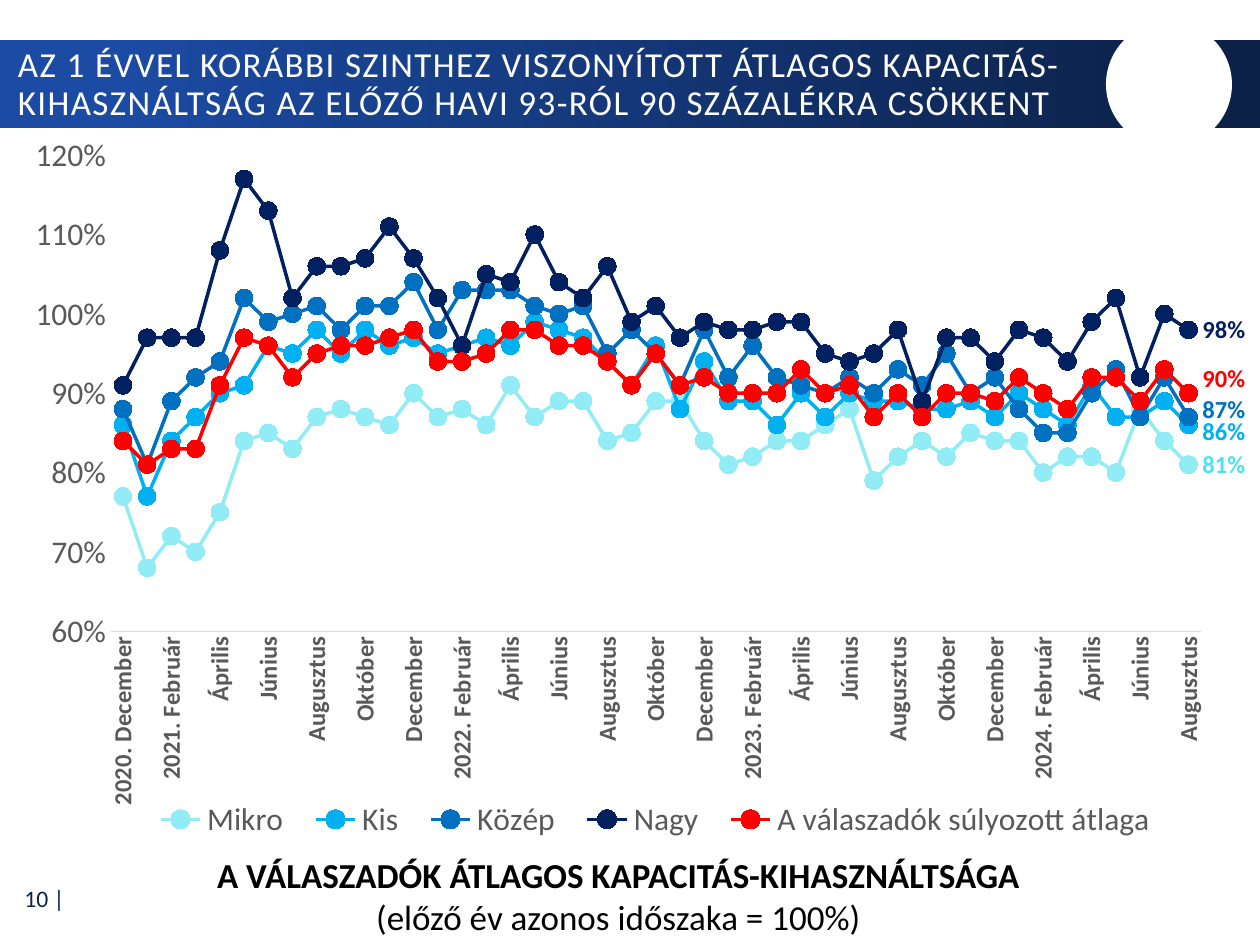
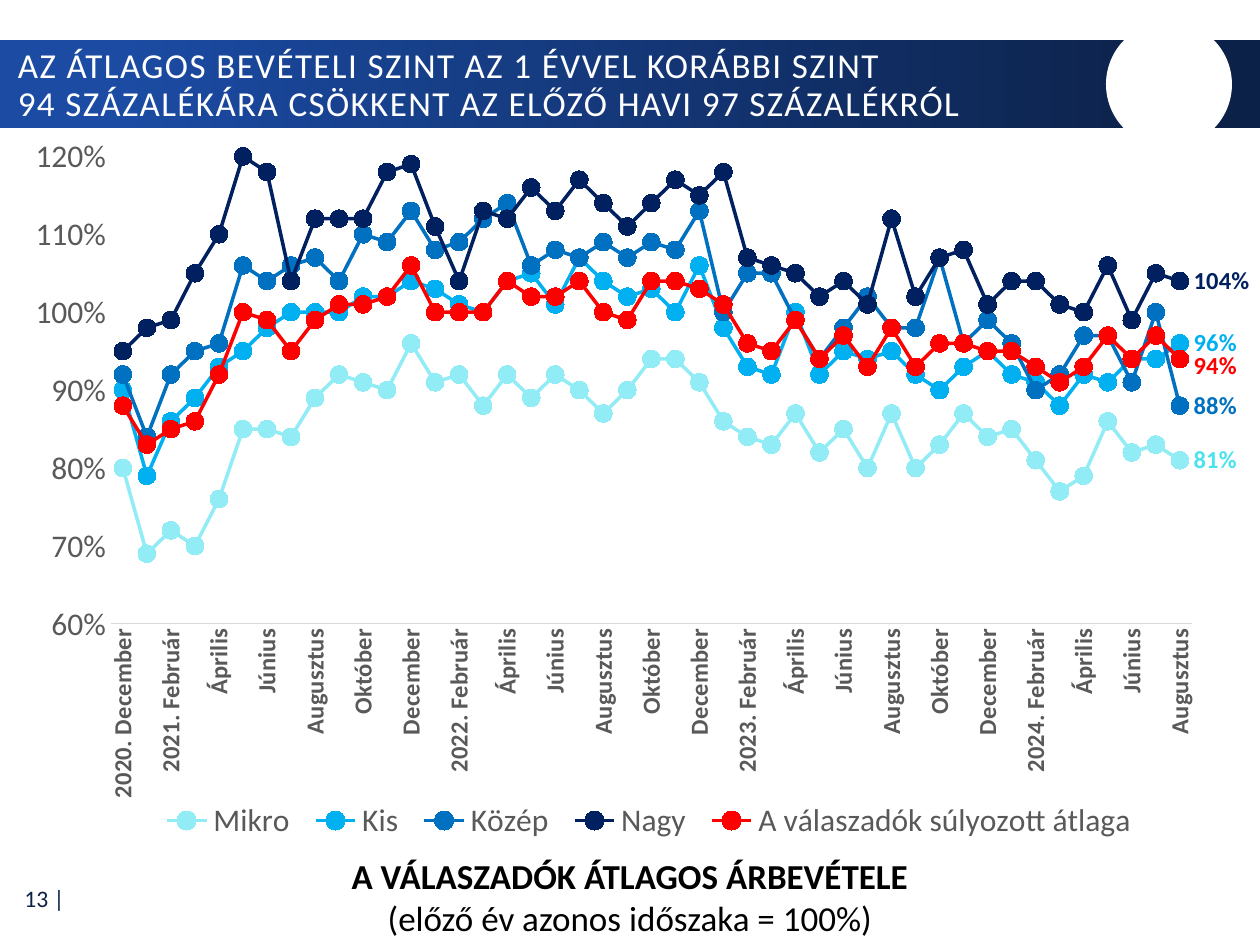
from lxml import etree
from pptx import Presentation
from pptx import util as u
from pptx.chart.data import CategoryChartData
from pptx.dml.color import RGBColor
from pptx.enum import chart as ch, shapes, text
from pptx.oxml import ns

Pt = u.Pt
FONT = "Calibri"
WHITE = RGBColor(0xFF, 0xFF, 0xFF)
BLACK = RGBColor(0, 0, 0)
NAVY = RGBColor(0x0C, 0x21, 0x48)
BLUE = RGBColor(0x1B, 0x4B, 0xA3)
GREY = RGBColor(0x59, 0x59, 0x59)
AXIS_GREY = RGBColor(0xD9, 0xD9, 0xD9)

# Company size: (line colour, label colour)
GROUPS = {
    "Mikro": (RGBColor(0x92, 0xEC, 0xF6), RGBColor(0x4C, 0xE2, 0xF0)),
    "Kis": (RGBColor(0x00, 0xB0, 0xF0),) * 2,
    "Közép": (RGBColor(0x00, 0x70, 0xC0),) * 2,
    "Nagy": (RGBColor(0x00, 0x20, 0x60),) * 2,
    "A válaszadók súlyozott átlaga": (RGBColor(0xFF, 0, 0),) * 2,
}

MONTHS = ["Február", "Április", "Június", "Augusztus", "Október", "December"]
MONTH_COUNT = 45
BASE_NOTE = "(előző év azonos időszaka = 100%)"

# Percent of the same period a year before, one row per company size
CAPACITY = [
    [77, 68, 72, 70, 75, 84, 85, 83, 87, 88, 87, 86, 90, 87, 88,
     86, 91, 87, 89, 89, 84, 85, 89, 89, 84, 81, 82, 84, 84, 86,
     88, 79, 82, 84, 82, 85, 84, 84, 80, 82, 82, 80, 88, 84, 81],
    [86, 77, 84, 87, 90, 91, 96, 95, 98, 95, 98, 96, 97, 95, 96,
     97, 96, 99, 98, 97, 94, 91, 96, 88, 94, 89, 89, 86, 90, 87,
     90, 89, 89, 88, 88, 89, 87, 90, 88, 86, 91, 87, 87, 89, 86],
    [88, 81, 89, 92, 94, 102, 99, 100, 101, 98, 101, 101, 104, 98, 103,
     103, 103, 101, 100, 101, 95, 98, 95, 91, 98, 92, 96, 92, 91, 90,
     92, 90, 93, 91, 95, 90, 92, 88, 85, 85, 90, 93, 87, 92, 87],
    [91, 97, 97, 97, 108, 117, 113, 102, 106, 106, 107, 111, 107, 102, 96,
     105, 104, 110, 104, 102, 106, 99, 101, 97, 99, 98, 98, 99, 99, 95,
     94, 95, 98, 89, 97, 97, 94, 98, 97, 94, 99, 102, 92, 100, 98],
    [84, 81, 83, 83, 91, 97, 96, 92, 95, 96, 96, 97, 98, 94, 94,
     95, 98, 98, 96, 96, 94, 91, 95, 91, 92, 90, 90, 90, 93, 90,
     91, 87, 90, 87, 90, 90, 89, 92, 90, 88, 92, 92, 89, 93, 90],
]
REVENUE = [
    [80, 69, 72, 70, 76, 85, 85, 84, 89, 92, 91, 90, 96, 91, 92,
     88, 92, 89, 92, 90, 87, 90, 94, 94, 91, 86, 84, 83, 87, 82,
     85, 80, 87, 80, 83, 87, 84, 85, 81, 77, 79, 86, 82, 83, 81],
    [90, 79, 86, 89, 93, 95, 98, 100, 100, 100, 102, 102, 104, 103, 101,
     100, 104, 105, 101, 107, 104, 102, 103, 100, 106, 98, 93, 92, 100, 92,
     95, 94, 95, 92, 90, 93, 95, 92, 91, 88, 92, 91, 94, 94, 96],
    [92, 84, 92, 95, 96, 106, 104, 106, 107, 104, 110, 109, 113, 108, 109,
     112, 114, 106, 108, 107, 109, 107, 109, 108, 113, 100, 105, 105, 99, 94,
     98, 102, 98, 98, 107, 96, 99, 96, 90, 92, 97, 97, 91, 100, 88],
    [95, 98, 99, 105, 110, 120, 118, 104, 112, 112, 112, 118, 119, 111, 104,
     113, 112, 116, 113, 117, 114, 111, 114, 117, 115, 118, 107, 106, 105, 102,
     104, 101, 112, 102, 107, 108, 101, 104, 104, 101, 100, 106, 99, 105, 104],
    [88, 83, 85, 86, 92, 100, 99, 95, 99, 101, 101, 102, 106, 100, 100,
     100, 104, 102, 102, 104, 100, 99, 104, 104, 103, 101, 96, 95, 99, 94,
     97, 93, 98, 93, 96, 96, 95, 95, 93, 91, 93, 97, 94, 97, 94],
]


def month_labels():
    """Name every second month, with the year at the start and each February."""
    labels = ["2020. December"]
    for i in range(1, MONTH_COUNT):
        month = MONTHS[(i // 2 - 1) % 6]
        if i % 2:
            labels.append("")
        elif month == "Február":
            labels.append(f"{2021 + i // 12}. {month}")
        else:
            labels.append(month)
    return labels


def style_font(font, size, color, bold=False):
    font.name, font.size, font.bold = FONT, Pt(size), bold
    font.color.rgb = color


def write(frame, lines, size=20, color=BLACK, align=text.PP_ALIGN.LEFT,
          anchor=text.MSO_ANCHOR.TOP, bold_first=False, line_spacing=None,
          tracking=None):
    frame.word_wrap = True
    frame.auto_size = text.MSO_AUTO_SIZE.NONE
    frame.vertical_anchor = anchor
    for i, line in enumerate(lines):
        paragraph = frame.add_paragraph() if i else frame.paragraphs[0]
        paragraph.text = line
        paragraph.alignment = align
        if line_spacing:
            paragraph.line_spacing = line_spacing
        for run in paragraph.runs:
            style_font(run.font, size, color, bold_first and i == 0)
            if tracking:
                run.font._element.set("spc", str(tracking))


def add_text(slide, box, lines, **style):
    write(slide.shapes.add_textbox(*map(Pt, box)).text_frame, lines, **style)


def add_plain_shape(slide, kind, box):
    shape = slide.shapes.add_shape(kind, *map(Pt, box))
    shape.shadow.inherit = False
    shape.line.fill.background()
    return shape


def add_header(slide, title, box):
    band = add_plain_shape(slide, shapes.MSO_SHAPE.RECTANGLE, (0, 23, 720, 50.4))
    band.fill.gradient()
    band.fill.gradient_angle = 0
    for stop, color, position in zip(band.fill.gradient_stops,
                                     (BLUE, NAVY), (0.09, 0.95)):
        stop.color.rgb, stop.position = color, position
    emblem = add_plain_shape(slide, shapes.MSO_SHAPE.OVAL, (632, 12.2, 72, 72))
    emblem.fill.solid()
    emblem.fill.fore_color.rgb = WHITE

    heading = slide.shapes.title
    heading.left, heading.top, heading.width, heading.height = map(Pt, box)
    write(heading.text_frame, [title], color=WHITE, line_spacing=0.9,
          anchor=text.MSO_ANCHOR.MIDDLE, tracking=80)
    slide.shapes._spTree.append(heading._element)  # in front of the band


def set_layout(parent, index, **settings):
    """Give a chart part a manual layout as its child number index."""
    old = parent.find(ns.qn("c:layout"))
    if old is not None:
        parent.remove(old)
    layout = etree.Element(ns.qn("c:layout"))
    manual = etree.SubElement(layout, ns.qn("c:manualLayout"))
    for tag, value in settings.items():
        etree.SubElement(manual, ns.qn(f"c:{tag}")).set("val", str(value))
    parent.insert(index, layout)


def format_axes(chart):
    months, percent = chart.category_axis, chart.value_axis
    for axis in (months, percent):
        axis.has_major_gridlines = False
        axis.major_tick_mark = axis.minor_tick_mark = ch.XL_TICK_MARK.NONE
    style_font(months.tick_labels.font, 14, GREY, bold=True)
    months._element.txPr.bodyPr.set("rot", "-5400000")
    months._element.txPr.bodyPr.set("vert", "horz")
    months.format.line.color.rgb = AXIS_GREY
    months.format.line.width = Pt(0.75)
    style_font(percent.tick_labels.font, 18, GREY)
    percent.tick_labels.number_format = "0%"
    percent.tick_labels.number_format_is_linked = False
    percent.minimum_scale, percent.maximum_scale = 0.6, 1.2
    percent.major_unit = 0.1
    percent.format.line.fill.background()


def format_series(series, line_color, label_color, label_shift):
    series.smooth = False
    series.format.line.color.rgb = line_color
    series.format.line.width = Pt(2)
    series.marker.style = ch.XL_MARKER_STYLE.CIRCLE
    series.marker.size = 10
    series.marker.format.fill.solid()
    series.marker.format.fill.fore_color.rgb = line_color
    series.marker.format.line.color.rgb = line_color

    series.data_labels.show_value = False
    latest = series.points[MONTH_COUNT - 1].data_label
    style_font(latest.font, 14, label_color, bold=True)
    latest.position = ch.XL_LABEL_POSITION.RIGHT
    if label_shift:
        label = series._element.find(".//" + ns.qn("c:dLbl"))
        set_layout(label, 1, x=0, y=label_shift)


def add_trend_chart(slide, top, rows, plot_size, legend_span, label_shifts):
    data = CategoryChartData(number_format="0%")
    data.categories = month_labels()
    for name, row in zip(GROUPS, rows):
        data.add_series(name, [value / 100 for value in row])
    chart = slide.shapes.add_chart(ch.XL_CHART_TYPE.LINE_MARKERS, 0, Pt(top),
                                   Pt(720), Pt(411), data).chart
    chart.has_title = False
    style_font(chart.font, 18, BLACK)
    chart.plots[0].vary_by_categories = False
    format_axes(chart)
    for series in chart.plots[0].series:
        format_series(series, *GROUPS[series.name],
                      label_shifts.get(series.name))

    chart.has_legend = True
    chart.legend.position = ch.XL_LEGEND_POSITION.BOTTOM
    chart.legend.include_in_layout = False
    style_font(chart.legend.font, 18, GREY)
    left, width = legend_span
    set_layout(chart.legend._element, 1, xMode="edge", yMode="edge",
               x=left, y=0.93, w=width, h=0.07)
    width, height = plot_size
    set_layout(chart._chartSpace.chart.plotArea, 0, layoutTarget="inner",
               xMode="edge", yMode="edge", x=0.088, y=0.039,
               w=width, h=height)


def add_trend_slide(deck, number, title, title_box, caption, caption_box,
                    **trend):
    slide = deck.slides.add_slide(deck.slide_layouts[5])
    add_text(slide, (0.7, 499.7, 43.2, 26.6), [f"{number} |"], size=13.5,
             color=NAVY, align=text.PP_ALIGN.RIGHT,
             anchor=text.MSO_ANCHOR.MIDDLE)
    add_header(slide, title, title_box)
    add_text(slide, caption_box, [caption, BASE_NOTE],
             align=text.PP_ALIGN.CENTER, bold_first=True)
    add_trend_chart(slide, **trend)


def main():
    deck = Presentation()
    deck.slide_width, deck.slide_height = Pt(720), Pt(540)
    add_trend_slide(
        deck, 10,
        "AZ 1 ÉVVEL KORÁBBI SZINTHEZ VISZONYÍTOTT ÁTLAGOS "
        "KAPACITÁS-KIHASZNÁLTSÁG AZ ELŐZŐ HAVI 93-RÓL 90 SZÁZALÉKRA CSÖKKENT",
        (3, 24.5, 665, 48),
        "A VÁLASZADÓK ÁTLAGOS KAPACITÁS-KIHASZNÁLTSÁGA",
        (63.4, 484, 580, 55.4),
        top=72.7, rows=CAPACITY, plot_size=(0.865, 0.662),
        legend_span=(0.11, 0.82),
        label_shifts={"Kis": 0.01, "Közép": -0.01,
                      "A válaszadók súlyozott átlaga": -0.02})
    add_trend_slide(
        deck, 13,
        "AZ ÁTLAGOS BEVÉTELI SZINT AZ 1 ÉVVEL KORÁBBI SZINT\v"
        "94 SZÁZALÉKÁRA CSÖKKENT AZ ELŐZŐ HAVI 97 SZÁZALÉKRÓL",
        (3, 25.2, 636, 48),
        "A VÁLASZADÓK ÁTLAGOS ÁRBEVÉTELE",
        (70, 484.6, 580, 55.4),
        top=73.4, rows=REVENUE, plot_size=(0.858, 0.65),
        legend_span=(0.12, 0.79),
        label_shifts={"A válaszadók súlyozott átlaga": 0.01})
    deck.save("out.pptx")


if __name__ == "__main__":
    main()
